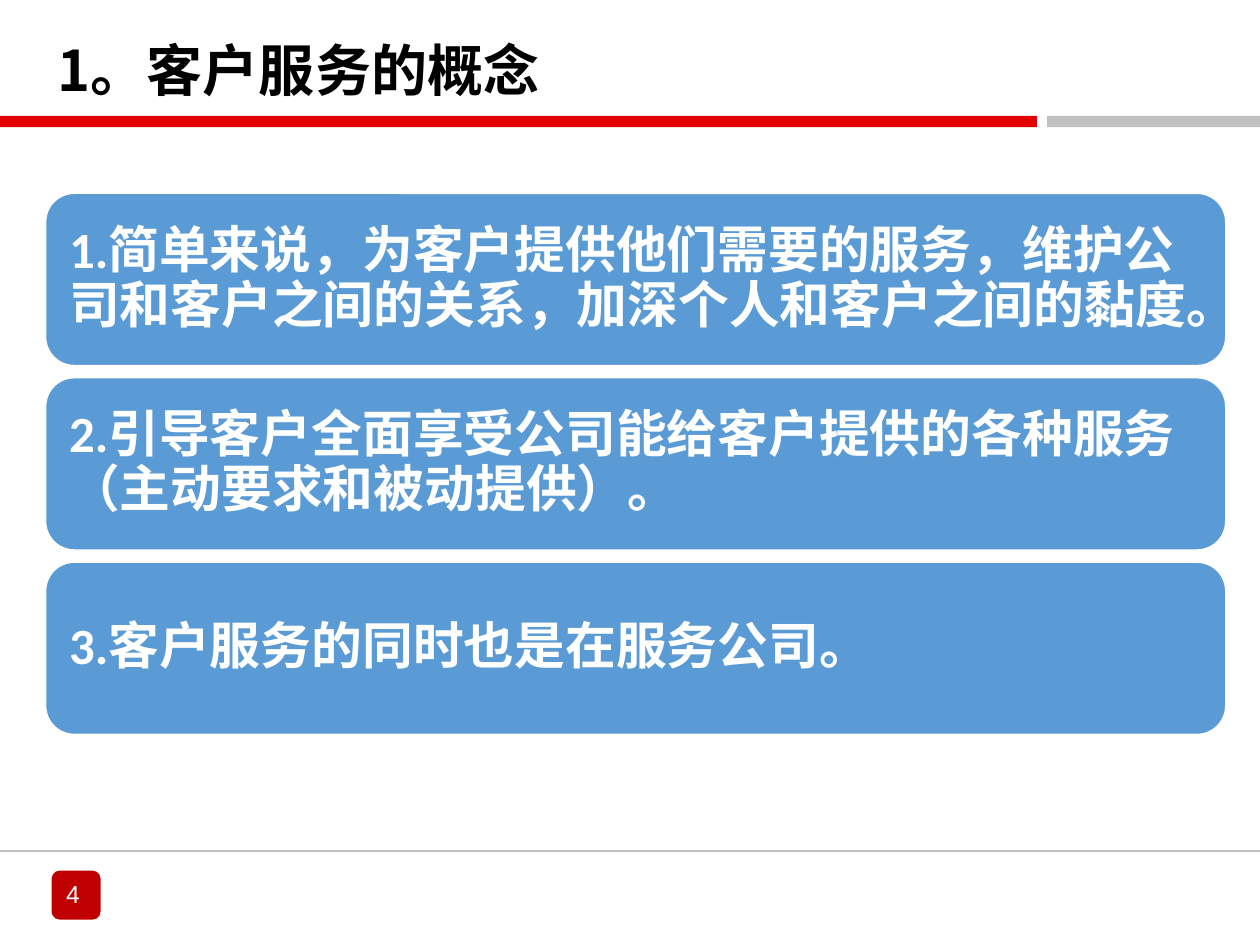
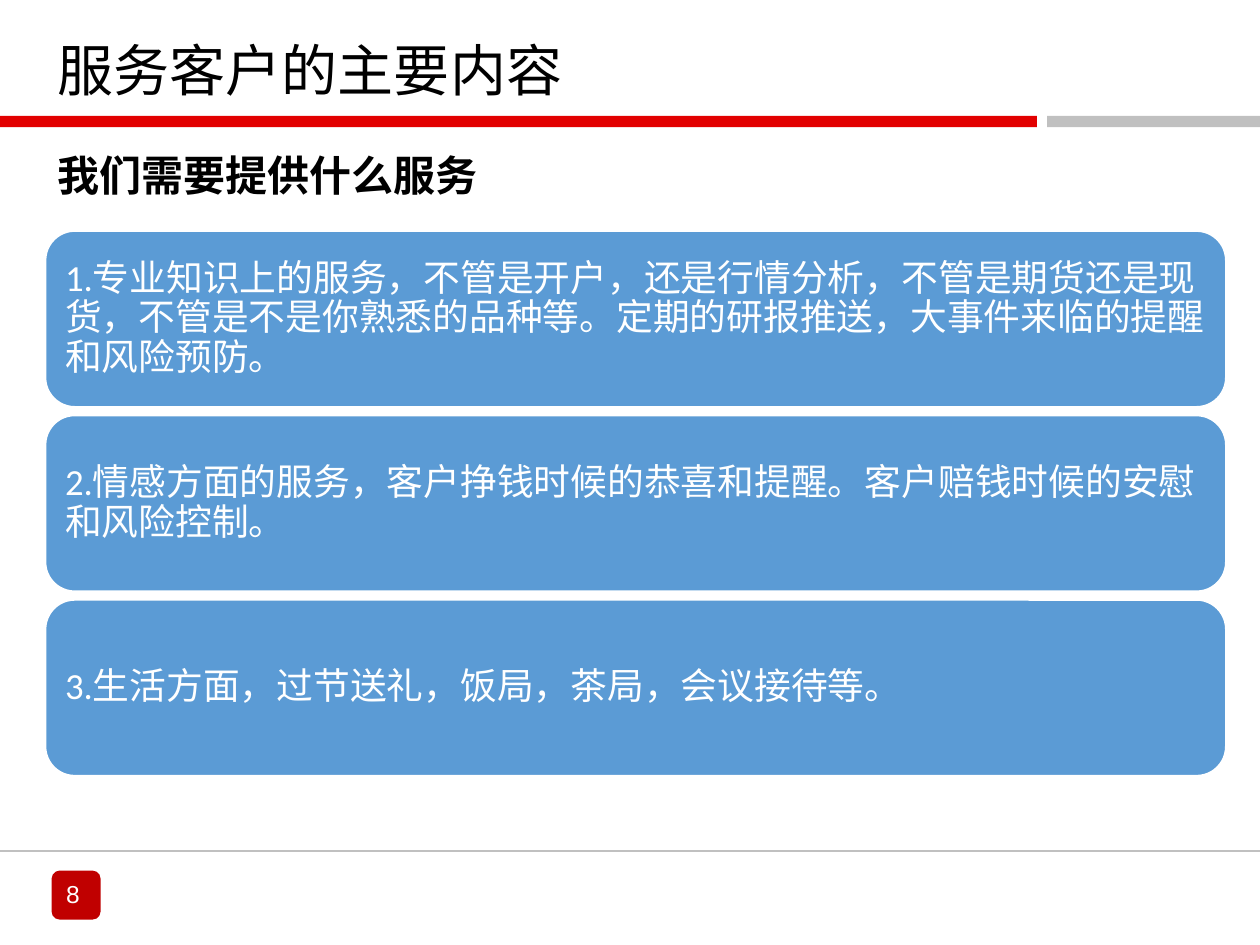
from dataclasses import dataclass

import pptx
import pptx.dml.color
import pptx.enum.lang
import pptx.enum.shapes
import pptx.enum.text
import pptx.oxml
import pptx.oxml.ns
import pptx.util
from pptx.util import Pt

SHAPE = pptx.enum.shapes.MSO_SHAPE
ALIGN = pptx.enum.text.PP_ALIGN
ANCHOR = pptx.enum.text.MSO_ANCHOR


@dataclass(frozen=True)
class Theme:
    black: str = "000000"
    white: str = "FFFFFF"
    red: str = "E20000"
    badge_red: str = "C00000"
    grey: str = "C0C0C0"
    blue: str = "5B9BD5"
    chinese_font: str = "Noto Sans CJK SC"
    card_font: str = "Calibri"
    heading_font: str = "Times New Roman"
    number_font: str = "Arial"
    title_size: float = 32
    subtitle_size: float = 24
    number_size: float = 14
    line_spacing: float = 0.9


@dataclass(frozen=True)
class Area:
    """A rectangle in points."""
    left: float
    top: float
    width: float
    height: float

    def lengths(self) -> tuple:
        return Pt(self.left), Pt(self.top), Pt(self.width), Pt(self.height)


@dataclass(frozen=True)
class CardStack:
    top: float
    height: float
    size: float
    bold: bool
    texts: tuple[str, ...]


@dataclass(frozen=True)
class Page:
    number: str
    title: str
    title_font: str
    title_bold: bool
    cards: CardStack
    subtitle: str = ""


THEME = Theme()
SLIDE_WIDTH, SLIDE_HEIGHT = 720, 540
MARGIN = 26
CARD_WIDTH = 674.5
CARD_PITCH = 105.4
FOOTER_LINE_TOP = 486.5
BADGE = Area(29.5, 497.5, 28, 28)
NUMBER = Area(18, 496, 51, 26.6)
TITLE = Area(MARGIN, 8.6, 594, 51.8)
SUBTITLE = Area(MARGIN, 85, 540, 42)
RED_BAND = Area(0, 66.2, 592.6, 6.5)
GREY_BAND = Area(598.3, 66.2, SLIDE_WIDTH - 598.3, 6.5)

PAGES = (
    Page("4", "1。客户服务的概念", THEME.chinese_font, True,
         CardStack(110.4, 98.6, 29, True, (
             "1.简单来说，为客户提供他们需要的服务，维护公司和客户之间的关系，加深个人和客户之间的黏度。",
             "2.引导客户全面享受公司能给客户提供的各种服务（主动要求和被动提供）。",
             "3.客户服务的同时也是在服务公司。"))),
    Page("8", "服务客户的主要内容", THEME.heading_font, False,
         CardStack(132, 100.5, 21, False, (
             "1.专业知识上的服务，不管是开户，还是行情分析，不管是期货还是现货，"
             "不管是不是你熟悉的品种等。定期的研报推送，大事件来临的提醒和风险预防。",
             "2.情感方面的服务，客户挣钱时候的恭喜和提醒。客户赔钱时候的安慰和风险控制。",
             "3.生活方面，过节送礼，饭局，茶局，会议接待等。")),
         subtitle="我们需要提供什么服务"),
)


def rgb(colour: str) -> pptx.dml.color.RGBColor:
    return pptx.dml.color.RGBColor.from_string(colour)


def write(box, text: str, *, size: float, font: str, colour: str = THEME.black,
          bold: bool = False, align=ALIGN.LEFT, anchor=ANCHOR.TOP,
          spacing: float = 1.0, insets: tuple = (7.2, 3.6, 7.2, 3.6)) -> None:
    """Fill a shape with one paragraph; insets run left, top, right, bottom."""
    frame = box.text_frame
    frame.word_wrap = True
    frame.vertical_anchor = anchor
    (frame.margin_left, frame.margin_top,
     frame.margin_right, frame.margin_bottom) = map(Pt, insets)
    para = frame.paragraphs[0]
    para.alignment = align
    para.line_spacing = spacing
    span = para.add_run()
    span.text = text
    span.font.size = Pt(size)
    span.font.bold = bold
    span.font.color.rgb = rgb(colour)
    span.font.name = font
    span.font.language_id = pptx.enum.lang.MSO_LANGUAGE_ID.SIMPLIFIED_CHINESE
    latin = span.font._element.find(pptx.oxml.ns.qn("a:latin"))
    east_asian = pptx.oxml.parse_xml(
        f'<a:ea {pptx.oxml.ns.nsdecls("a")} typeface="{THEME.chinese_font}"/>')
    latin.addnext(east_asian)


def add_block(page, area: Area, fill: str, kind=SHAPE.RECTANGLE, outline: str = ""):
    block = page.shapes.add_shape(kind, *area.lengths())
    block.shadow.inherit = False
    block.fill.solid()
    block.fill.fore_color.rgb = rgb(fill)
    if outline:
        block.line.color.rgb = rgb(outline)
        block.line.width = Pt(1)
    else:
        block.line.fill.background()
    return block


def add_footer_line(page) -> None:
    rule = page.shapes.add_connector(
        pptx.enum.shapes.MSO_CONNECTOR.STRAIGHT,
        Pt(0), Pt(FOOTER_LINE_TOP), Pt(SLIDE_WIDTH), Pt(FOOTER_LINE_TOP))
    rule.line.color.rgb = rgb(THEME.grey)
    rule.line.width = Pt(1)
    rule._element.spPr.append(
        pptx.oxml.parse_xml(f'<a:effectLst {pptx.oxml.ns.nsdecls("a")}/>'))


def add_frame(page, number: str) -> None:
    """Draw the title bands and the footer that every slide shares."""
    add_block(page, BADGE, THEME.badge_red, SHAPE.ROUNDED_RECTANGLE)
    add_block(page, RED_BAND, THEME.red)
    add_block(page, GREY_BAND, THEME.grey)
    add_footer_line(page)
    write(page.shapes.add_textbox(*NUMBER.lengths()), number,
          size=THEME.number_size, font=THEME.number_font, colour=THEME.white,
          align=ALIGN.CENTER, insets=(7.2, 6.5, 10.6, 3.6))


def add_cards(page, cards: CardStack) -> None:
    inset = 0.3 * cards.size
    for index, text in enumerate(cards.texts):
        area = Area(MARGIN, cards.top + index * CARD_PITCH, CARD_WIDTH, cards.height)
        card = add_block(page, area, THEME.blue, SHAPE.ROUNDED_RECTANGLE, THEME.white)
        write(card, text, size=cards.size, font=THEME.card_font,
              colour=THEME.white, bold=cards.bold, anchor=ANCHOR.MIDDLE,
              spacing=THEME.line_spacing, insets=(inset,) * 4)


def add_page(deck, content: Page) -> None:
    page = deck.slides.add_slide(deck.slide_layouts[6])
    add_frame(page, content.number)
    write(page.shapes.add_textbox(*TITLE.lengths()), content.title,
          size=THEME.title_size, font=content.title_font, bold=content.title_bold,
          anchor=ANCHOR.BOTTOM, spacing=THEME.line_spacing,
          insets=(7.2, 3.6, 7.2, 1.2))
    if content.subtitle:
        write(page.shapes.add_textbox(*SUBTITLE.lengths()), content.subtitle,
              size=THEME.subtitle_size, font=THEME.heading_font, bold=True,
              spacing=THEME.line_spacing)
    add_cards(page, content.cards)


def main() -> None:
    deck = pptx.Presentation()
    deck.slide_width, deck.slide_height = Pt(SLIDE_WIDTH), Pt(SLIDE_HEIGHT)
    for content in PAGES:
        add_page(deck, content)
    deck.save("out.pptx")


if __name__ == "__main__":
    main()
